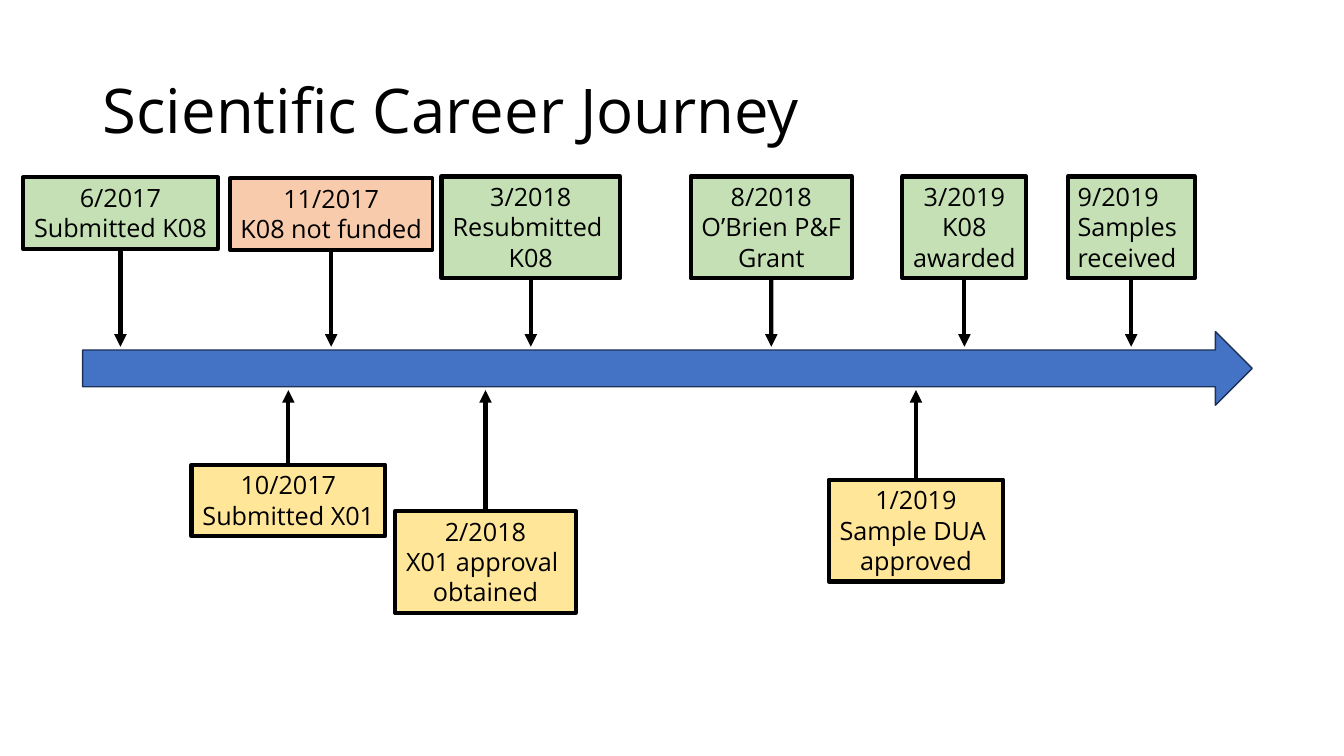
import pptx
import pptx.util
import pptx.dml.color
import pptx.enum.shapes
import pptx.enum.text
import pptx.oxml
import pptx.oxml.ns
from pptx.util import Inches

ALIGN = pptx.enum.text.PP_ALIGN
GREEN, ORANGE, YELLOW = "C5E0B4", "F8CBAD", "FFE699"
ABOVE_Y, BELOW_Y = 3.44, 3.87


def paint(fmt, color):
    if hasattr(fmt, "solid"):
        fmt.solid()
        fmt = fmt.fore_color
    fmt.rgb = pptx.dml.color.RGBColor.from_string(color)


def style(font, size):
    for name, value in {"name": "Open Sans", "size": pptx.util.Pt(size)}.items():
        setattr(font, name, value)
    paint(font.color, "000000")


prs = pptx.Presentation()
prs.slide_width, prs.slide_height = Inches(13.33), Inches(7.5)
s = prs.slides.add_slide(prs.slide_layouts[5])

title = s.shapes.title
place = {"left": 0.92, "top": 0.4, "width": 11.5, "height": 1.45}
for name, value in place.items():
    setattr(title, name, Inches(value))
tf = title.text_frame
tf.text = "Scientific Career Journey"
tf.vertical_anchor = pptx.enum.text.MSO_ANCHOR.MIDDLE
p = tf.paragraphs[0]
for name, value in {"alignment": ALIGN.LEFT, "line_spacing": 0.9}.items():
    setattr(p, name, value)
style(p.runs[0].font, 44)

timeline = s.shapes.add_shape(
    pptx.enum.shapes.MSO_SHAPE.RIGHT_ARROW,
    Inches(0.82), Inches(3.29), Inches(11.6), Inches(0.73))
timeline.shadow.inherit = False
paint(timeline.fill, "4472C4")
paint(timeline.line.fill, "1E3256")
timeline.line.width = pptx.util.Pt(1)

events = [
    (0.23, 1.76, 1.93, GREEN, ["6/2017", "Submitted K08"]),
    (2.28, 1.77, 2.01, ORANGE, ["11/2017", "K08 not funded"]),
    (4.38, 1.75, 1.77, GREEN, ["3/2018", "Resubmitted ", "K08"]),
    (6.85, 1.75, 1.6, GREEN, ["8/2018", "O’Brien P&F", "Grant"]),
    (8.95, 1.75, 1.23, GREEN, ["3/2019", "K08", "awarded"]),
    (10.59, 1.75, 1.26, GREEN, ["9/2019", "Samples", "received"]),
    (1.9, 4.61, 1.92, YELLOW, ["10/2017", "Submitted X01"]),
    (3.92, 5.07, 1.79, YELLOW, ["2/2018", "X01 approval ", "obtained"]),
    (8.22, 4.76, 1.73, YELLOW, ["1/2019", "Sample DUA ", "approved"]),
]

for x, y, width, color, lines in events:
    height = 0.71 if len(lines) == 2 else 1.01
    sp = s.shapes.add_textbox(Inches(x), Inches(y), Inches(width), Inches(height))
    paint(sp.fill, color)
    paint(sp.line.fill, "000000")
    sp.line.width = pptx.util.Pt(2.75 if color == ORANGE else 3)
    tf = sp.text_frame
    tf.word_wrap = False
    tf.auto_size = pptx.enum.text.MSO_AUTO_SIZE.SHAPE_TO_FIT_TEXT
    tf.text = "\n".join(lines)
    for p in tf.paragraphs:
        p.alignment = ALIGN.LEFT if lines[0] == "9/2019" else ALIGN.CENTER
        style(p.runs[0].font, 18)

    above = y < ABOVE_Y
    center = Inches(x + width / 2)
    arrow = s.shapes.add_connector(
        pptx.enum.shapes.MSO_CONNECTOR.STRAIGHT,
        center, Inches(y + height if above else y),
        center, Inches(ABOVE_Y if above else BELOW_Y))
    arrow.begin_connect(sp, 2 if above else 0)
    paint(arrow.line.fill, "000000")
    arrow.line.width = pptx.util.Pt(3)
    ln = arrow.line._get_or_add_ln()
    ln.append(pptx.oxml.parse_xml(
        f'<a:tailEnd {pptx.oxml.ns.nsdecls("a")} type="triangle"/>'))
    ln.addnext(pptx.oxml.parse_xml(f'<a:effectLst {pptx.oxml.ns.nsdecls("a")}/>'))

prs.save("out.pptx")
